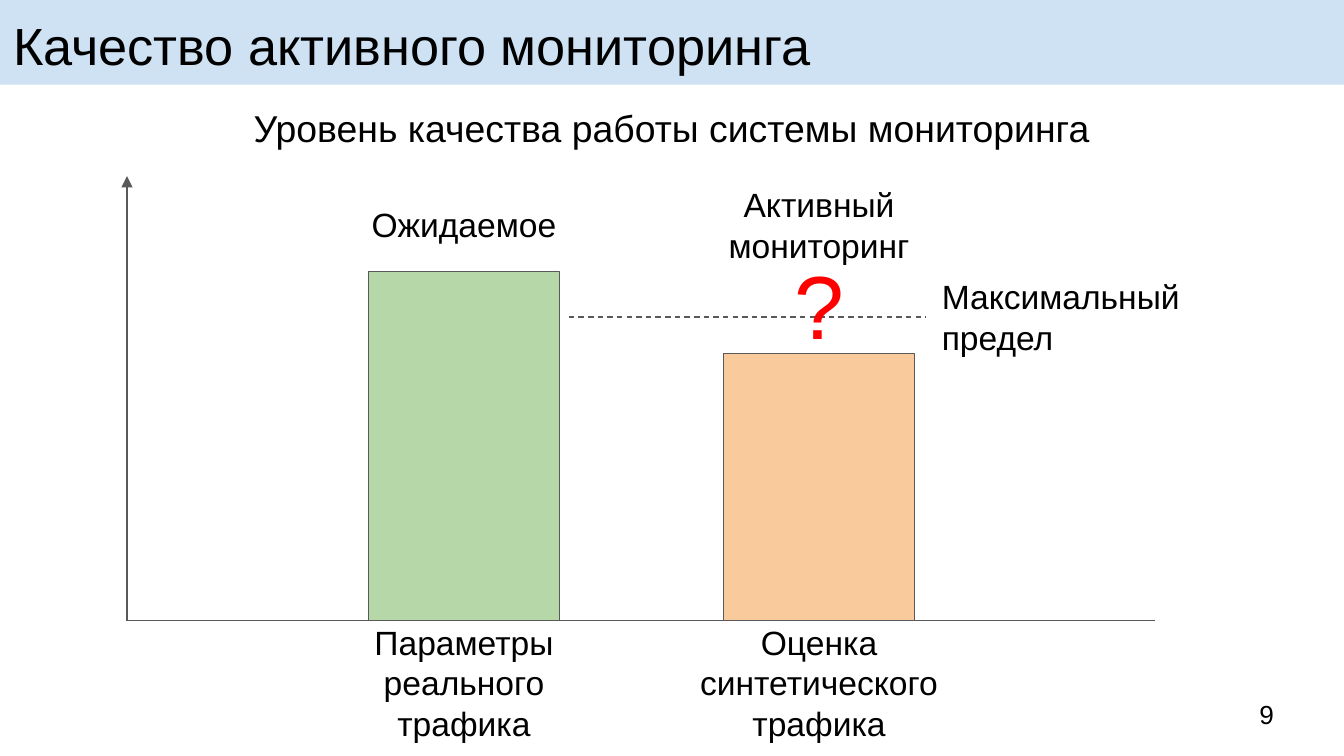
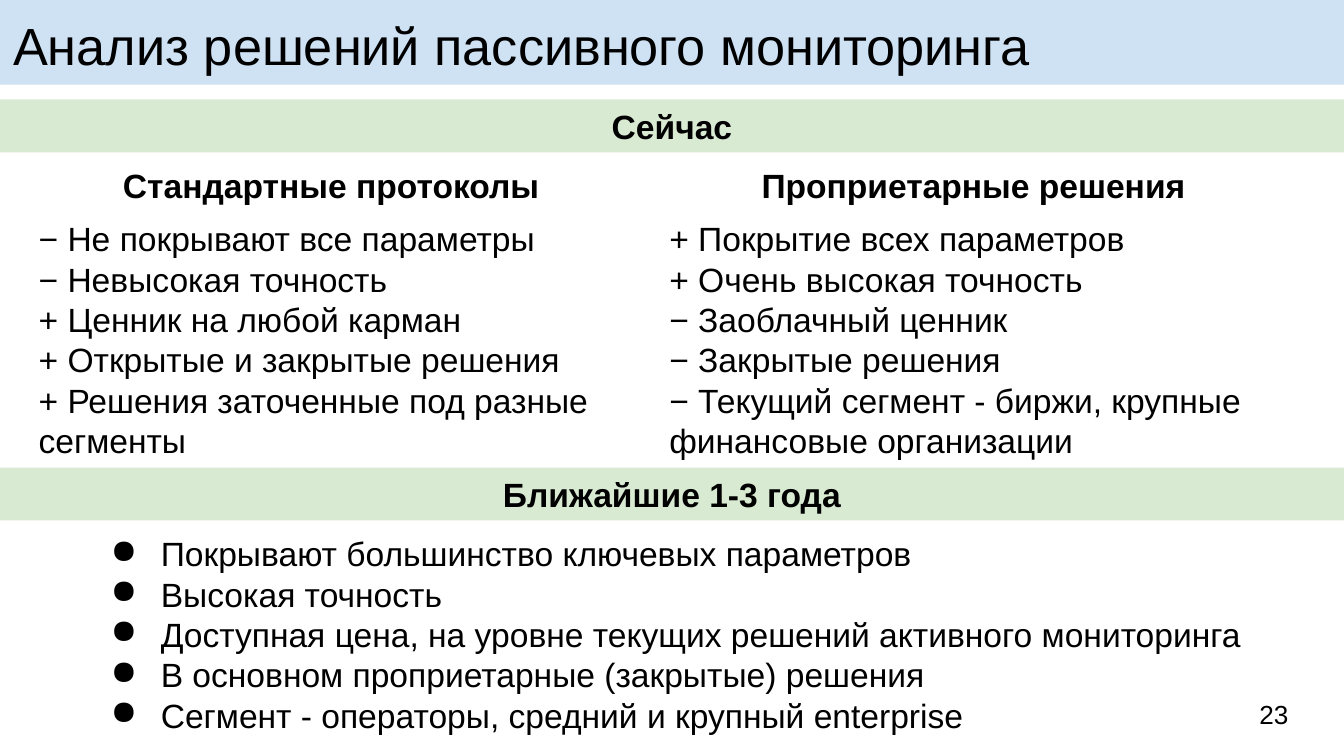
from lxml import etree
from pptx import Presentation
from pptx.dml.color import RGBColor
from pptx.enum import dml, shapes, text
from pptx.oxml import ns
from pptx.util import Cm, Pt

TITLE_BLUE = RGBColor(0xCF, 0xE2, 0xF3)
BAND_GREEN = RGBColor(0xD9, 0xEA, 0xD3)
BAR_GREEN = RGBColor(0xB6, 0xD7, 0xA8)
BAR_ORANGE = RGBColor(0xF9, 0xCB, 0x9C)
LINE_GREY = RGBColor(0x59, 0x59, 0x59)
BLACK = RGBColor(0, 0, 0)
RED = RGBColor(0xFF, 0, 0)

FONT = "Arial"
BODY_SIZE = 18
SLIDE_W, SLIDE_H = 25.4, 14.29
INSET = 0.25

LEFT, CENTER = text.PP_ALIGN.LEFT, text.PP_ALIGN.CENTER
TOP, MIDDLE = text.MSO_ANCHOR.TOP, text.MSO_ANCHOR.MIDDLE


# Shared helpers; every box is (left, top, width, height) in cm
def cm(box):
    return [Cm(value) for value in box]


def write(shape, lines, size=BODY_SIZE, align=LEFT, anchor=MIDDLE, bold=False, color=BLACK):
    frame = shape.text_frame
    frame.word_wrap = True
    frame.auto_size = text.MSO_AUTO_SIZE.NONE
    frame.vertical_anchor = anchor
    frame.margin_left = frame.margin_right = Cm(INSET)
    frame.margin_top = frame.margin_bottom = Cm(INSET)
    frame.text = "\n".join(lines)
    for paragraph in frame.paragraphs:
        paragraph.alignment = align
        font = paragraph.font
        font.name, font.size, font.bold = FONT, Pt(size), bold
        font.color.rgb = color
    return frame.paragraphs


def add_text(slide, box, lines, **style):
    return write(slide.shapes.add_textbox(*cm(box)), lines, **style)


def add_rect(slide, box, fill, outlined=False):
    rect = slide.shapes.add_shape(shapes.MSO_SHAPE.RECTANGLE, *cm(box))
    rect.shadow.inherit = False
    rect.fill.solid()
    rect.fill.fore_color.rgb = fill
    if outlined:
        rect.line.color.rgb = LINE_GREY
        rect.line.width = Pt(0.75)
    else:
        rect.line.fill.background()
    return rect


def add_line(slide, start, end, dashed=False, arrow=False):
    line = slide.shapes.add_connector(shapes.MSO_CONNECTOR.STRAIGHT, *cm(start + end))
    line.line.color.rgb = LINE_GREY
    line.line.width = Pt(0.75)
    if dashed:
        line.line.dash_style = dml.MSO_LINE.DASH
    if arrow:
        etree.SubElement(line.line._get_or_add_ln(), ns.qn("a:tailEnd"), type="triangle")
    etree.SubElement(line._element.spPr, ns.qn("a:effectLst"))


def add_slide(prs, title, number):
    """Slide with the blue title band and the page number."""
    slide = prs.slides.add_slide(prs.slide_layouts[5])
    band = slide.shapes.title
    band.left, band.top, band.width, band.height = cm((0, 0, SLIDE_W, 1.6))
    band.fill.solid()
    band.fill.fore_color.rgb = TITLE_BLUE
    write(band, [title], size=28, anchor=TOP)
    add_text(slide, (23.55, 12.95, 1.52, 1.1), [str(number)], size=14)
    return slide


# Slide 1: expected quality against active monitoring
def quality_bar(slide, center, baseline, height, fill, label, label_top, category, category_width):
    width, label_width = 3.6, 4.1
    add_rect(slide, (center - width / 2, baseline - height, width, height), fill, outlined=True)
    add_text(slide, (center - label_width / 2, label_top, label_width, 1.83), [label], align=CENTER)
    add_text(slide, (center - category_width / 2, baseline, category_width, 2.34),
             [category], align=CENTER)


def quality_diagram(slide, box):
    left, top, width, height = box
    baseline = top + height
    expected, active = left + 6.37, left + 13.08

    quality_bar(slide, expected, baseline, 6.6, BAR_GREEN,
                "Ожидаемое", top, "Параметры реального трафика", 4.55)
    quality_bar(slide, active, baseline, 5.05, BAR_ORANGE,
                "Активный мониторинг", top, "Оценка синтетического трафика", 5.3)

    # Upper limit with the open question above the second bar
    limit = top + 2.66
    add_line(slide, (left + 8.35, limit), (left + 15.1, limit), dashed=True)
    add_text(slide, (left + 15.15, limit - 0.69, 5.18, 1.37), ["Максимальный предел"])
    add_text(slide, (active - 2, limit - 0.94, 4, 1.37), ["?"], size=48, align=CENTER, color=RED)

    # Axes
    add_line(slide, (left, baseline), (left, top), arrow=True)
    add_line(slide, (left, baseline), (left + width, baseline))


def build_quality_slide(prs):
    slide = add_slide(prs, "Качество активного мониторинга", 9)
    add_text(slide, (2.41, 1.88, 20.57, 1.07),
             ["Уровень качества работы системы мониторинга"], size=20, align=CENTER)
    quality_diagram(slide, (2.4, 3.33, 19.42, 8.4))


# Slide 2: passive solutions today and in the coming years
def period_band(slide, top, period):
    band = add_rect(slide, (0, top, SLIDE_W, 1), BAND_GREEN)
    write(band, [period], align=CENTER, bold=True)


def solution_column(slide, box, heading, points):
    first = add_text(slide, box, [heading] + points, anchor=TOP)[0]
    first.alignment = CENTER
    first.font.bold = True
    first.space_after = Pt(7)


def forecast_list(slide, box, points):
    for paragraph in add_text(slide, box, points, anchor=TOP):
        properties = paragraph._p.get_or_add_pPr()
        properties.set("marL", str(Cm(1.27)))
        properties.set("indent", str(-Cm(0.95)))
        bullet = etree.Element(ns.qn("a:buChar"), char="●")
        properties.insert_element_before(bullet, "a:tabLst", "a:defRPr", "a:extLst")


def build_analysis_slide(prs):
    slide = add_slide(prs, "Анализ решений пассивного мониторинга", 23)
    period_band(slide, 1.88, "Сейчас")
    solution_column(slide, (0.48, 2.87, 11.56, 5.72), "Стандартные протоколы", [
        "− Не покрывают все параметры",
        "− Невысокая точность",
        "+ Ценник на любой карман",
        "+ Открытые и закрытые решения",
        "+ Решения заточенные под разные сегменты",
    ])
    solution_column(slide, (12.4, 2.87, 12, 5.72), "Проприетарные решения", [
        "+ Покрытие всех параметров",
        "+ Очень высокая точность",
        "− Заоблачный ценник",
        "− Закрытые решения",
        "− Текущий сегмент - биржи, крупные финансовые организации",
    ])
    period_band(slide, 8.84, "Ближайшие 1-3 года")
    forecast_list(slide, (1.52, 9.83, 22.38, 4.45), [
        "Покрывают большинство ключевых параметров",
        "Высокая точность",
        "Доступная цена, на уровне текущих решений активного мониторинга",
        "В основном проприетарные (закрытые) решения",
        "Сегмент - операторы, средний и крупный enterprise",
    ])


def main():
    prs = Presentation()
    prs.slide_width, prs.slide_height = Cm(SLIDE_W), Cm(SLIDE_H)
    build_quality_slide(prs)
    build_analysis_slide(prs)
    prs.save("out.pptx")


if __name__ == "__main__":
    main()
